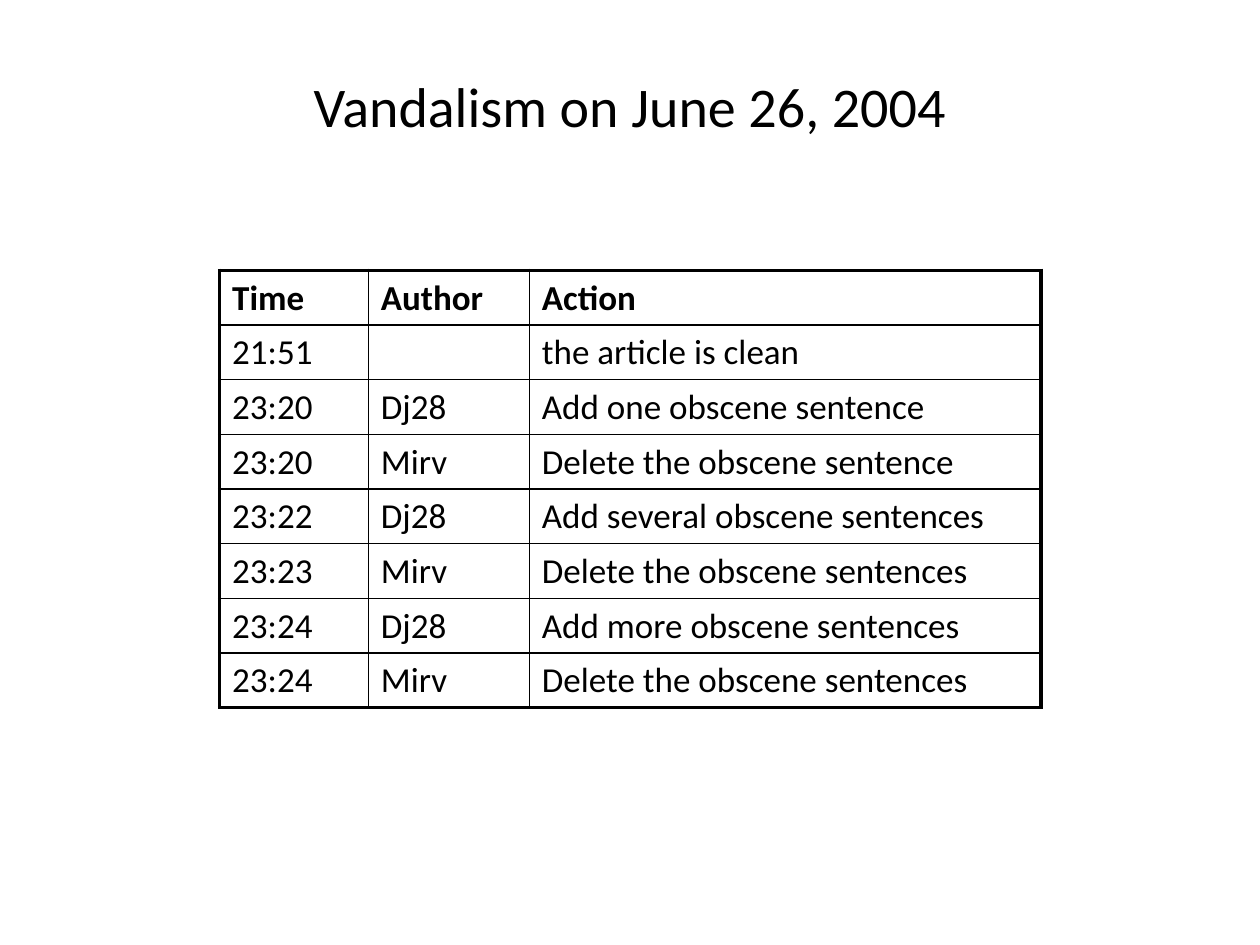
from lxml import etree
from pptx import Presentation
from pptx.dml.color import RGBColor
from pptx.enum import text
from pptx.oxml import ns
from pptx.util import Pt

BLACK = RGBColor(0, 0, 0)
FONT = "Calibri"
OUTER, INNER = 2.25, 1

COL_WIDTHS = [85, 92, 292.5]
ROW_HEIGHT = 31.25
ROWS = [
    ("Time", "Author", "Action"),
    ("21:51", "", "the article is clean"),
    ("23:20", "Dj28", "Add one obscene sentence"),
    ("23:20", "Mirv", "Delete the obscene sentence"),
    ("23:22", "Dj28", "Add several obscene sentences"),
    ("23:23", "Mirv", "Delete the obscene sentences"),
    ("23:24", "Dj28", "Add more obscene sentences"),
    ("23:24", "Mirv", "Delete the obscene sentences"),
]


def add_run(p, words, size, bold=False):
    r = p.add_run()
    r.text = words
    r.font.name, r.font.size, r.font.bold = FONT, Pt(size), bold
    r.font.color.rgb = BLACK


def set_borders(cell, widths):
    """Draw the left, right, top and bottom lines, widths in points."""
    tcPr = cell._tc.get_or_add_tcPr()
    for i, (side, width) in enumerate(zip(("lnL", "lnR", "lnT", "lnB"), widths)):
        ln = etree.Element(ns.qn(f"a:{side}"), w=str(Pt(width)))
        fill = etree.SubElement(ln, ns.qn("a:solidFill"))
        etree.SubElement(fill, ns.qn("a:srgbClr"), val=str(BLACK))
        tcPr.insert(i, ln)


def add_title(s, left, top, width, height):
    sp = s.shapes.add_textbox(Pt(left), Pt(top), Pt(width), Pt(height))
    tf = sp.text_frame
    tf.word_wrap = True
    tf.vertical_anchor = text.MSO_ANCHOR.MIDDLE
    p = tf.paragraphs[0]
    p.alignment = text.PP_ALIGN.CENTER
    add_run(p, "Vandalism on June 26, 2004", 32)


def add_edit_table(s, left, top):
    n_rows, n_cols = len(ROWS), len(COL_WIDTHS)
    table = s.shapes.add_table(n_rows, n_cols, Pt(left), Pt(top),
                               Pt(sum(COL_WIDTHS)), Pt(ROW_HEIGHT * n_rows)).table
    table.first_row = table.horz_banding = False
    for col, width in zip(table.columns, COL_WIDTHS):
        col.width = Pt(width)
    for i, row in enumerate(ROWS):
        table.rows[i].height = Pt(ROW_HEIGHT)
        for j, words in enumerate(row):
            cell = table.cell(i, j)
            cell.fill.background()
            if words:
                add_run(cell.text_frame.paragraphs[0], words, 20, bold=i == 0)
            # Heavy lines around the table, thin lines inside
            on_edge = (j == 0, j == n_cols - 1, i == 0, i == n_rows - 1)
            set_borders(cell, [OUTER if edge else INNER for edge in on_edge])


def main():
    prs = Presentation()
    prs.slide_width, prs.slide_height = Pt(720), Pt(540)
    s = prs.slides.add_slide(prs.slide_layouts[6])
    add_title(s, 36, 31, 648, 57.6)
    add_edit_table(s, 125.5, 154.5)
    prs.save("out.pptx")


if __name__ == "__main__":
    main()
